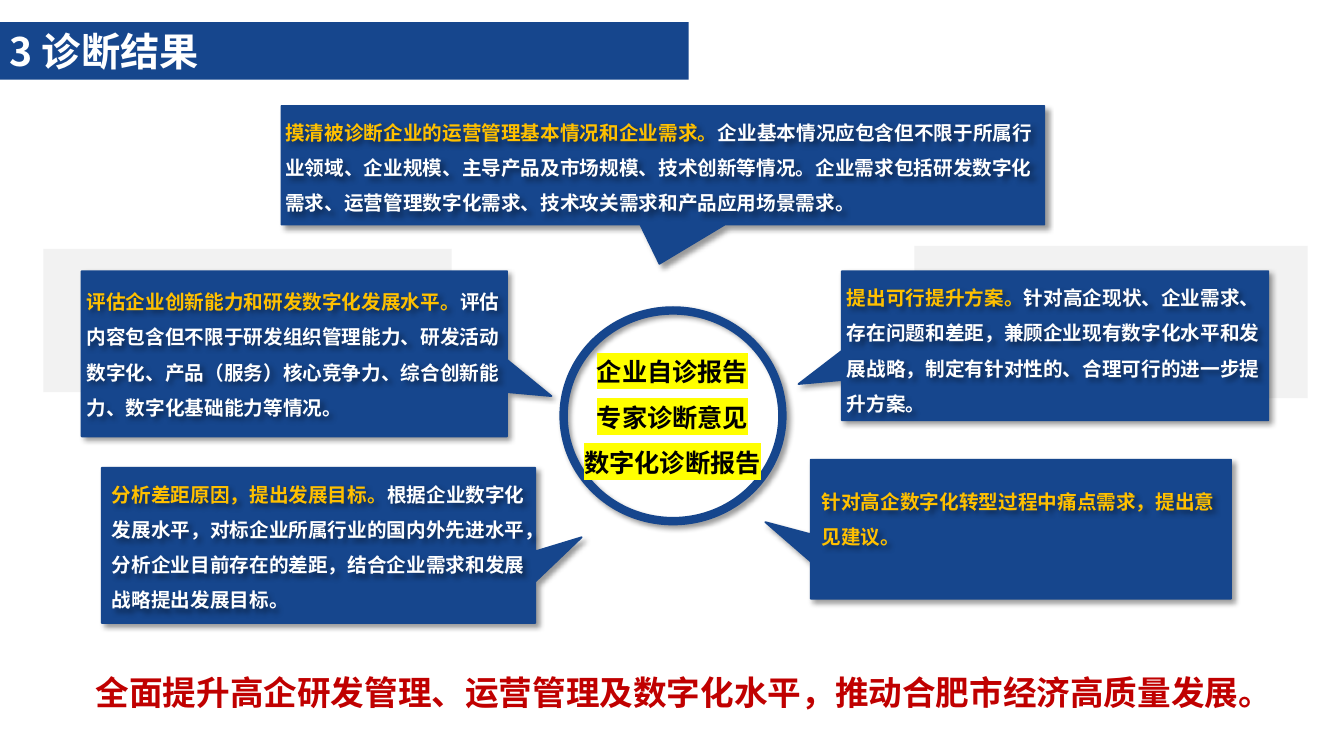
from lxml import etree
from pptx import Presentation
from pptx.dml.color import RGBColor
from pptx.enum import shapes, text
from pptx.oxml import ns
from pptx.util import Inches, Pt

FONT = "Noto Sans CJK SC"
COLORS = {
    "blue": "16468D", "gray": "F2F2F2", "white": "FFFFFF", "gold": "FFC000",
    "yellow": "FFFF00", "black": "000000", "red": "C00000",
}
TOP, RIGHT, BOTTOM, LEFT = range(4)

# Box (left, top, width, height), side, tail (start, tip, end) clockwise
BACK_PANELS = [
    ((9.07, 2.44, 3.9, 1.51), BOTTOM, (10.84, (10.38, 4.15), 10.31)),
    ((0.43, 2.47, 4.05, 1.42), BOTTOM, (3.87, (3.75, 4.06), 3.41)),
]
# Box, side, tail, text offset from the box (left, top, right, bottom), lead, body
CALLOUTS = [
    ((2.79, 1.05, 7.57, 1.18), BOTTOM, (7.19, (6.54, 2.62), 6.35),
     (0.04, 0.03, 0, 0.09), "摸清被诊断企业的运营管理基本情况和企业需求。",
     "企业基本情况应包含但不限于所属行业领域、企业规模、主导产品及市场规模、技术创新等情况。"
     "企业需求包括研发数字化需求、运营管理数字化需求、技术攻关需求和产品应用场景需求。"),
    ((0.81, 2.69, 4.22, 1.64), RIGHT, (3.57, (5.47, 3.93), 3.89),
     (0.05, 0.07, 0.01, 0.01), "评估企业创新能力和研发数字化发展水平。",
     "评估内容包含但不限于研发组织管理能力、研发活动数字化、产品（服务）核心竞争力、"
     "综合创新能力、数字化基础能力等情况。"),
    ((1.01, 4.64, 4.3, 1.54), RIGHT, (5.47, (5.77, 5.33), 5.77),
     (0.1, 0.03, 0.08, 0.05), "分析差距原因，提出发展目标。",
     "根据企业数字化发展水平，对标企业所属行业的国内外先进水平，分析企业目前存在的差距，"
     "结合企业需求和发展战略提出发展目标。"),
    ((8.35, 2.69, 4.23, 1.48), LEFT, (3.77, (7.92, 3.81), 3.48),
     (0.05, 0.03, 0.05, 0), "提出可行提升方案。",
     "针对高企现状、企业需求、存在问题和差距，兼顾企业现有数字化水平和发展战略，"
     "制定有针对性的、合理可行的进一步提升方案。"),
    ((8.04, 4.56, 4.17, 1.38), LEFT, (5.57, (7.59, 5.18), 5.3),
     (0.11, 0.18, 0.01, 0.11), "针对高企数字化转型过程中痛点需求，提出意见建议。", ""),
]
REPORTS = ["企业自诊报告", "专家诊断意见", "数字化诊断报告"]


def color(name):
    return RGBColor.from_string(COLORS[name])


def add_shadow(shape):
    """Give a shape a soft lower-right shadow; without a fill its text casts it."""
    shape.shadow.inherit = False
    effects = shape._element.spPr.find(ns.qn("a:effectLst"))
    shadow = etree.SubElement(effects, ns.qn("a:outerShdw"), blurRad=str(Pt(4)),
                              dist=str(Pt(3)), dir="2700000", algn="tl", rotWithShape="0")
    tint = etree.SubElement(shadow, ns.qn("a:srgbClr"), val=COLORS["black"])
    etree.SubElement(tint, ns.qn("a:alpha"), val="40000")


def add_highlight(run, name):
    highlight = etree.Element(ns.qn("a:highlight"))
    etree.SubElement(highlight, ns.qn("a:srgbClr"), val=COLORS[name])
    run.font._element.find(ns.qn("a:solidFill")).addnext(highlight)


def format_run(run, size, name):
    run.font.size = Pt(size)
    run.font.bold = True
    run.font.color.rgb = color(name)
    run.font.name = FONT
    latin = run.font._element.find(ns.qn("a:latin"))
    latin.addnext(etree.Element(ns.qn("a:ea"), typeface=FONT))


def add_text_box(slide, box):
    text_box = slide.shapes.add_textbox(*map(Inches, box))
    text_box.text_frame.word_wrap = True
    return text_box


def add_panel(slide, box, side, tail, fill):
    """Draw a rectangle whose given side carries a pointed tail."""
    left, top, width, height = box
    right, bottom = left + width, top + height
    points = [(left, top), (right, top), (right, bottom), (left, bottom)]
    start, tip, end = tail
    if side in (TOP, BOTTOM):
        edge = top if side == TOP else bottom
        points[side + 1:side + 1] = [(start, edge), tip, (end, edge)]
    else:
        edge = left if side == LEFT else right
        points[side + 1:side + 1] = [(edge, start), tip, (edge, end)]
    points = [(Inches(x), Inches(y)) for x, y in points]
    builder = slide.shapes.build_freeform(*points[0])
    builder.add_line_segments(points[1:], close=True)
    panel = builder.convert_to_shape()
    panel.shadow.inherit = False
    panel.fill.solid()
    panel.fill.fore_color.rgb = color(fill)
    panel.line.fill.background()
    return panel


def add_callout(slide, box, side, tail, offset, lead, body):
    panel = add_panel(slide, box, side, tail, "blue")
    panel.line.color.rgb = color("blue")
    panel.line.width = Pt(1 if side == BOTTOM else 1.25)
    add_shadow(panel)

    left, top, width, height = box
    text_box = add_text_box(slide, (left + offset[0], top + offset[1],
                                    width - offset[0] - offset[2],
                                    height - offset[1] - offset[3]))
    add_shadow(text_box)
    frame = text_box.text_frame
    frame.margin_left = frame.margin_right = frame.margin_top = frame.margin_bottom = 0
    paragraph = frame.paragraphs[0]
    paragraph.line_spacing = 1.5
    for words, name in ((lead, "gold"), (body, "white")):
        if words:
            run = paragraph.add_run()
            run.text = words
            format_run(run, 14, name)


def add_title(slide, box):
    bar = slide.shapes.add_shape(shapes.MSO_SHAPE.RECTANGLE, *map(Inches, box))
    bar.shadow.inherit = False
    bar.fill.solid()
    bar.fill.fore_color.rgb = color("blue")
    bar.line.fill.background()
    frame = bar.text_frame
    frame.text = "3 诊断结果"
    frame.vertical_anchor = text.MSO_ANCHOR.MIDDLE
    frame.paragraphs[0].alignment = text.PP_ALIGN.LEFT
    format_run(frame.paragraphs[0].runs[0], 28, "white")


def add_ring(slide, box):
    ring = slide.shapes.add_shape(shapes.MSO_SHAPE.OVAL, *map(Inches, box))
    ring.fill.background()
    ring.line.color.rgb = color("blue")
    ring.line.width = Pt(6)
    add_shadow(ring)


def add_reports(slide, box):
    frame = add_text_box(slide, box).text_frame
    frame.text = "\n".join(REPORTS)
    for paragraph in frame.paragraphs:
        paragraph.alignment = text.PP_ALIGN.CENTER
        paragraph.line_spacing = 1.5
        format_run(paragraph.runs[0], 18, "black")
        add_highlight(paragraph.runs[0], "yellow")


def add_conclusion(slide, box):
    frame = add_text_box(slide, box).text_frame
    frame.text = "全面提升高企研发管理、运营管理及数字化水平，推动合肥市经济高质量发展。"
    frame.paragraphs[0].line_spacing = 1.6
    format_run(frame.paragraphs[0].runs[0], 24, "red")


def main():
    presentation = Presentation()
    presentation.slide_width = Inches(13.33)
    presentation.slide_height = Inches(7.5)
    slide = presentation.slides.add_slide(presentation.slide_layouts[6])
    add_title(slide, (0, 0.22, 6.83, 0.57))
    for panel in BACK_PANELS:
        add_panel(slide, *panel, "gray")
    add_ring(slide, (5.59, 3.08, 2.17, 2.09))
    for callout in CALLOUTS:
        add_callout(slide, *callout)
    add_reports(slide, (5.6, 3.34, 2.14, 1.46))
    add_conclusion(slide, (0.85, 6.38, 11.92, 0.75))
    presentation.save("out.pptx")


if __name__ == "__main__":
    main()
